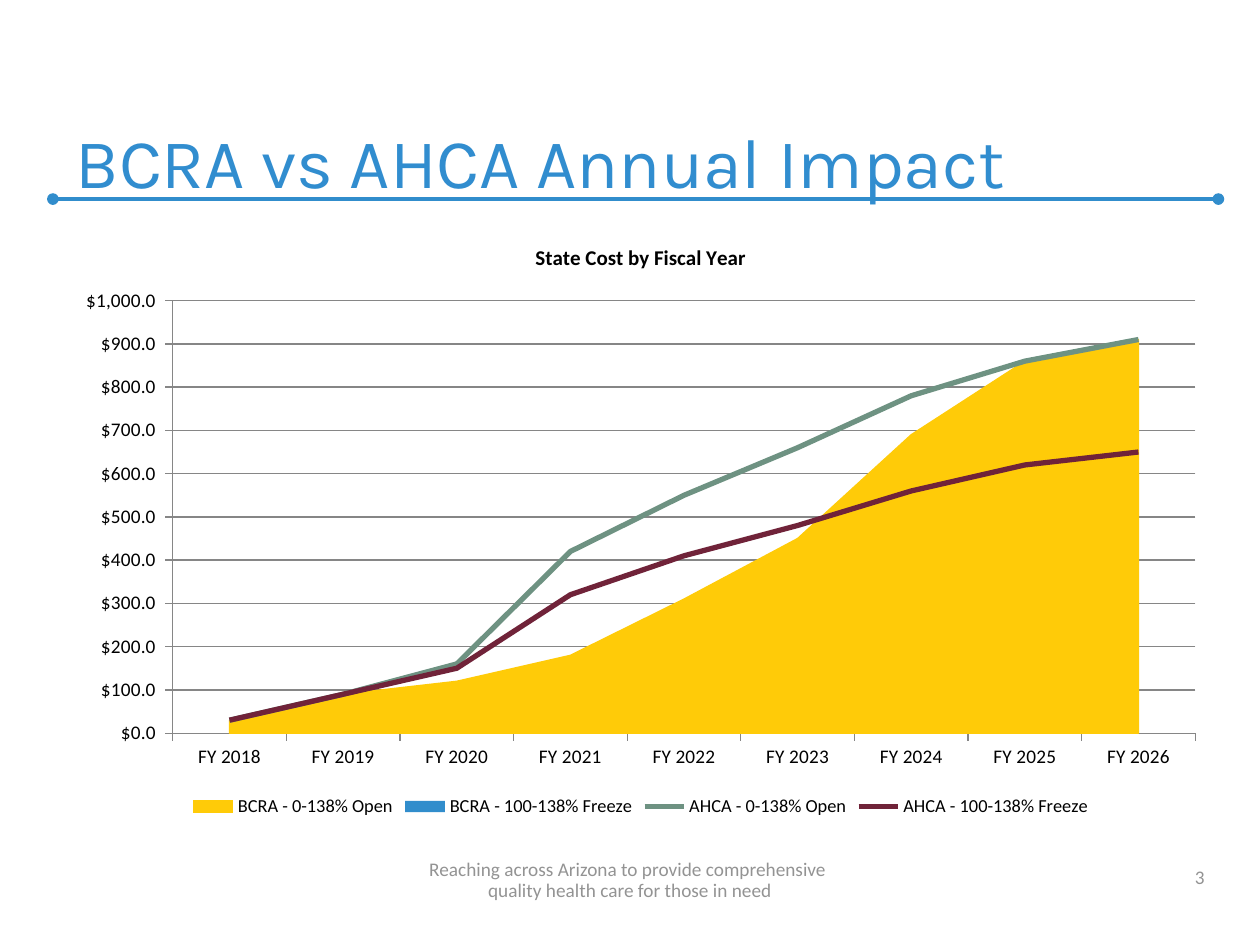
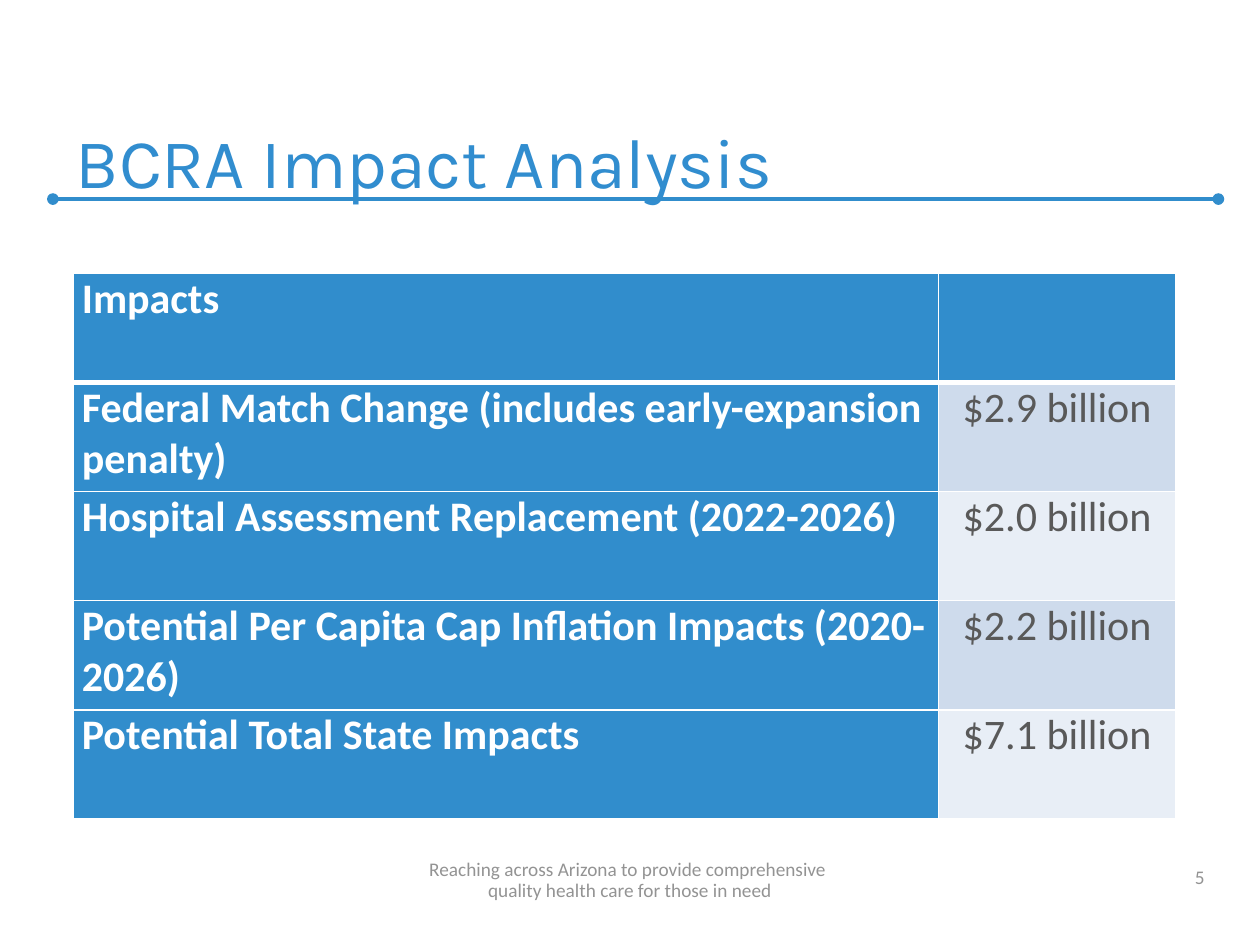
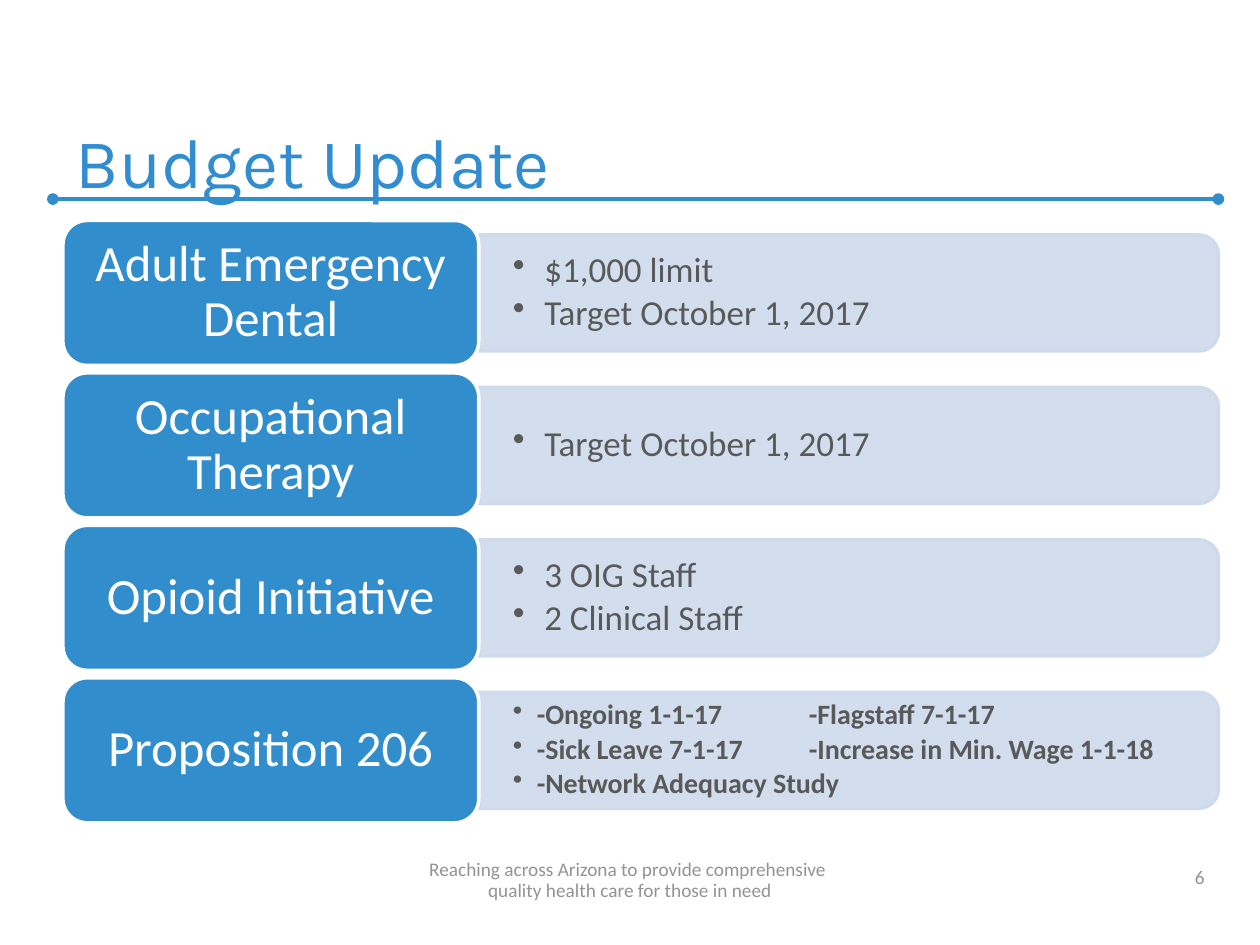
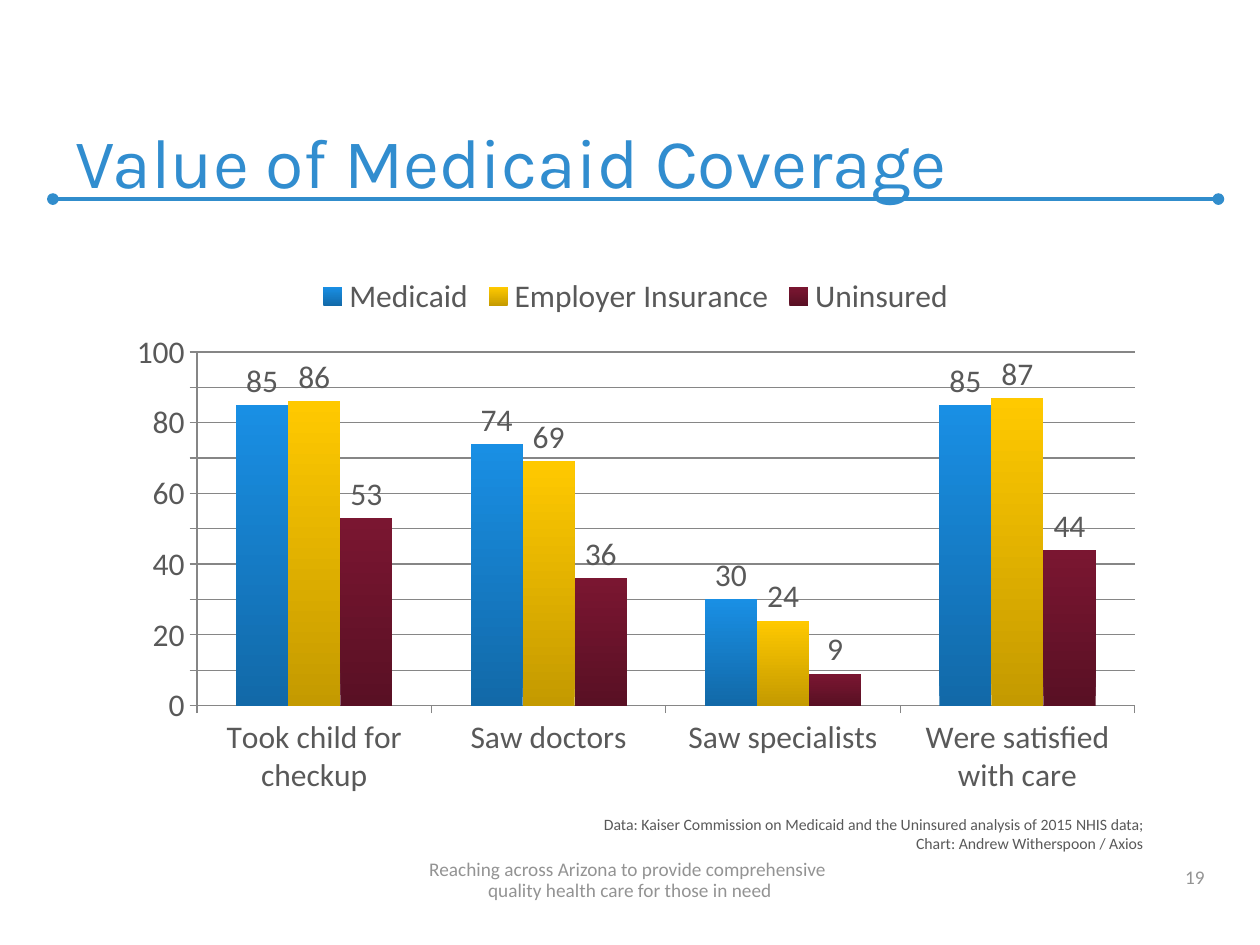
from lxml import etree
from pptx import Presentation
from pptx.chart.data import CategoryChartData
from pptx.dml.color import RGBColor
from pptx.enum.chart import (XL_CHART_TYPE, XL_LABEL_POSITION, XL_LEGEND_POSITION,
                             XL_MARKER_STYLE, XL_TICK_MARK)
from pptx.enum.shapes import MSO_CONNECTOR, MSO_SHAPE
from pptx.enum.text import MSO_ANCHOR, MSO_AUTO_SIZE, PP_ALIGN
from pptx.oxml import parse_xml
from pptx.oxml.ns import nsdecls, qn
from pptx.util import Inches, Pt

AREA, COLUMN = XL_CHART_TYPE.AREA, XL_CHART_TYPE.COLUMN_CLUSTERED
LEFT, CENTER, RIGHT = PP_ALIGN.LEFT, PP_ALIGN.CENTER, PP_ALIGN.RIGHT
TOP, MIDDLE, BOTTOM = MSO_ANCHOR.TOP, MSO_ANCHOR.MIDDLE, MSO_ANCHOR.BOTTOM

COLORS = {
    "title": "318DCF", "blue": "318DCC", "gold": "FFCB08", "wine": "702339",
    "sage": "6E9282", "pale": "CEDBEC", "light": "E8EEF6", "text": "595959",
    "foot": "939393", "grid": "868686", "white": "FFFFFF", "black": "000000",
    "blue_hi": "198FE4", "blue_lo": "1269A8", "gold_hi": "FFC900",
    "gold_lo": "C49A00", "wine_hi": "7A1631", "wine_lo": "591024",
}
BODY, HEAD = "Calibri", "Karla"
WIDE, HIGH = 10, 7.5

FOOT = ["Reaching across Arizona to provide comprehensive ",
        "quality health care for those in need"]

COST = {
    "title": "State Cost by Fiscal Year",
    "cats": [f"FY {year}" for year in range(2018, 2027)],
    "areas": [
        ("BCRA - 0-138% Open", [30, 90, 120, 180, 310, 450, 690, 860, 910], "gold"),
        ("BCRA - 100-138% Freeze", [30, 90, 110, 150, 270, 400, 540, 620, 650], "blue"),
    ],
    "lines": [
        ("AHCA - 0-138% Open", [30, 90, 160, 420, 550, 660, 780, 860, 910], "sage"),
        ("AHCA - 100-138% Freeze", [30, 90, 150, 320, 410, 480, 560, 620, 650], "wine"),
    ],
}
IMPACTS = [
    ("Impacts", ""),
    ("Federal Match Change (includes early-expansion penalty)", "$2.9 billion"),
    ("Hospital Assessment Replacement (2022-2026)", "$2.0 billion"),
    ("Potential Per Capita Cap Inflation Impacts (2020-2026)", "$2.2 billion"),
    ("Potential Total State Impacts", "$7.1 billion"),
]
BUDGET = [
    ("Adult Emergency Dental", ["$1,000 limit", "Target October 1, 2017"], 20, False),
    ("Occupational Therapy", ["Target October 1, 2017"], 20, False),
    ("Opioid Initiative", ["3 OIG Staff", "2 Clinical Staff"], 20, False),
    ("Proposition 206", ["-Ongoing 1-1-17\t-Flagstaff 7-1-17",
                         "-Sick Leave 7-1-17\t-Increase in Min. Wage 1-1-18",
                         "-Network Adequacy Study"], 16, True),
]
CARE = {
    "cats": ["Took child for checkup", "Saw doctors", "Saw specialists",
             "Were satisfied with care"],
    "bars": [
        ("Medicaid", [85, 74, 30, 85], "blue"),
        ("Employer Insurance", [86, 69, 24, 87], "gold"),
        ("Uninsured", [53, 36, 9, 44], "wine"),
    ],
}
CREDIT = ("Data: Kaiser Commission on Medicaid and the Uninsured analysis of "
          "2015 NHIS data; Chart: Andrew Witherspoon / Axios")


def rgb(name):
    return RGBColor.from_string(COLORS[name])


def ink(font, size, color, bold=False, face=BODY):
    font.name, font.size, font.bold = face, Pt(size), bold
    font.color.rgb = rgb(color)


def write(para, text, size, color, bold=False, face=BODY):
    run = para.add_run()
    run.text = text
    ink(run.font, size, color, bold, face)


def inset(frame, side, edge):
    frame.margin_left = frame.margin_right = Inches(side)
    frame.margin_top = frame.margin_bottom = Inches(edge)


def box(slide, at, anchor=TOP):
    frame = slide.shapes.add_textbox(*map(Inches, at)).text_frame
    frame.word_wrap = True
    frame.vertical_anchor = anchor
    return frame


def rule(slide):
    line = slide.shapes.add_connector(
        MSO_CONNECTOR.STRAIGHT, *map(Inches, (0.42, 1.58, 9.67, 1.58)))
    line.line.color.rgb = rgb("blue")
    line.line.width = Pt(2.25)
    pen = line.line._get_or_add_ln()
    for end in ("a:headEnd", "a:tailEnd"):
        etree.SubElement(pen, qn(end), type="oval")
    etree.SubElement(line._element.spPr, qn("a:effectLst"))


def base(deck, title, number):
    slide = deck.slides.add_slide(deck.slide_layouts[5])
    rule(slide)
    head = slide.shapes.title
    head.left, head.top, head.width, head.height = map(Inches, (0.5, 0.33, 9.08, 1.33))
    frame = head.text_frame
    frame.auto_size = MSO_AUTO_SIZE.NONE
    frame.vertical_anchor = BOTTOM
    para = frame.paragraphs[0]
    para.alignment = LEFT
    write(para, title, 40, "title", face=HEAD)

    para = box(slide, (7.33, 6.78, 2.33, 0.32), BOTTOM).paragraphs[0]
    para.alignment = RIGHT
    write(para, str(number), 11, "foot")

    para = box(slide, (0, 6.78, WIDE, 0.42), BOTTOM).paragraphs[0]
    para.alignment = CENTER
    para.line_spacing = Pt(12)
    write(para, FOOT[0], 11, "foot")
    para.add_line_break()
    write(para, FOOT[1], 11, "foot")
    return slide


def plot(slide, kind, at, cats, rows, size, color, spot, peak, step):
    data = CategoryChartData()
    data.categories = cats
    for name, values, _ in rows:
        data.add_series(name, values)
    chart = slide.shapes.add_chart(kind, *map(Inches, at), data).chart
    ink(chart.font, size, color)
    chart.has_title = False
    chart.has_legend = True
    chart.legend.position = spot
    chart.legend.include_in_layout = False
    chart.plots[0].vary_by_categories = False
    axis = chart.value_axis
    axis.minimum_scale, axis.maximum_scale, axis.major_unit = 0, peak, step
    axis.has_major_gridlines = True
    axis.major_gridlines.format.line.color.rgb = rgb("grid")
    for each in (axis, chart.category_axis):
        each.major_tick_mark = XL_TICK_MARK.OUTSIDE
        each.minor_tick_mark = XL_TICK_MARK.NONE
        each.format.line.color.rgb = rgb("grid")
        ink(each.tick_labels.font, size, color)
    return chart


def split(chart, count):
    area = chart.plots[0]._element
    line = parse_xml(f'<c:lineChart {nsdecls("c")}><c:grouping val="standard"/>'
                     '<c:varyColors val="0"/></c:lineChart>')
    for ser in area.findall(qn("c:ser"))[count:]:
        line.append(ser)
    etree.SubElement(line, qn("c:marker"), val="1")
    for ref in area.findall(qn("c:axId")):
        etree.SubElement(line, qn("c:axId"), val=ref.get("val"))
    area.addnext(line)
    chart.value_axis._element.find(qn("c:crossBetween")).set("val", "between")


def cost(slide):
    areas, lines = COST["areas"], COST["lines"]
    chart = plot(slide, AREA, (0.5, 1.75, 9.17, 4.78), COST["cats"], areas + lines,
                 11, "black", XL_LEGEND_POSITION.BOTTOM, 1000, 100)
    split(chart, len(areas))
    chart.has_title = True
    write(chart.chart_title.text_frame.paragraphs[0], COST["title"], 12, "black", True)
    ink(chart.legend.font, 10.5, "black")
    marks = chart.value_axis.tick_labels
    marks.number_format = '"$"#,##0.0_);\\("$"#,##0.0\\)'
    marks.number_format_is_linked = False
    for ser, (_, _, color) in zip(chart.plots[0].series, areas):
        ser.format.fill.solid()
        ser.format.fill.fore_color.rgb = rgb(color)
    edge = chart.plots[0].series[0].format.line
    edge.color.rgb, edge.width = rgb("gold"), Pt(0.75)
    for ser, (_, _, color) in zip(chart.plots[1].series, lines):
        ser.format.line.color.rgb = rgb(color)
        ser.format.line.width = Pt(3)
        ser.marker.style = XL_MARKER_STYLE.NONE
        ser.smooth = False


def borders(cell, base_width):
    props = cell._tc.get_or_add_tcPr()
    widths = {"a:lnL": 1, "a:lnR": 1, "a:lnT": 1, "a:lnB": base_width}
    for spot, (tag, width) in enumerate(widths.items()):
        edge = etree.Element(qn(tag), w=str(Pt(width)))
        fill = etree.SubElement(edge, qn("a:solidFill"))
        etree.SubElement(fill, qn("a:srgbClr"), val=COLORS["white"])
        props.insert(spot, edge)


def impacts(slide):
    at = map(Inches, (0.58, 2.17, 8.75, 4.33))
    table = slide.shapes.add_table(len(IMPACTS), 2, *at).table
    table.first_col = True
    for col, width in zip(table.columns, (6.87, 1.88)):
        col.width = Inches(width)
    for r, row in enumerate(IMPACTS):
        for c, text in enumerate(row):
            cell = table.cell(r, c)
            dark = r == 0 or c == 0
            inset(cell, 0.07, 0)
            cell.fill.solid()
            cell.fill.fore_color.rgb = rgb("blue" if dark else "pale" if r % 2 else "light")
            borders(cell, 3 if r == 0 else 1)
            if text:
                para = cell.text_frame.paragraphs[0]
                para.alignment = CENTER if c else LEFT
                para.space_after = Pt(1)
                write(para, text, 24, "white" if dark else "text", dark)


def bullet(para, indent, tab):
    props = para._p.get_or_add_pPr()
    props.set("marL", str(Inches(indent)))
    props.set("indent", str(-Inches(indent)))
    etree.SubElement(props, qn("a:buChar"), char="•")
    if tab:
        stops = etree.SubElement(props, qn("a:tabLst"))
        etree.SubElement(stops, qn("a:tab"), pos=str(Inches(tab)), algn="l")


def fade(paint):
    tint = paint._xPr.find(qn("a:solidFill"))[0]
    etree.SubElement(tint, qn("a:alpha"), val="90000")


def block(slide, kind, at, fill, edge):
    shape = slide.shapes.add_shape(kind, *map(Inches, at))
    shape.shadow.inherit = False
    shape.fill.solid()
    shape.fill.fore_color.rgb = rgb(fill)
    shape.line.color.rgb = rgb(edge)
    shape.line.width = Pt(2)
    return shape


def budget(slide):
    left, top, card, tall, step = 0.5, 1.75, 3.3, 1.15, 1.21
    long, thick = 5.87, 0.92
    start = left + card
    for i, (name, items, size, bold) in enumerate(BUDGET):
        y = top + i * step
        mid = y + tall / 2
        panel = block(slide, MSO_SHAPE.ROUND_2_SAME_RECTANGLE,
                      (start + (long - thick) / 2, mid - long / 2, thick, long),
                      "pale", "pale")
        panel.rotation = 90
        fade(panel.fill)
        frame = box(slide, (start, mid - 0.415, 5.82, 0.83), MIDDLE)
        inset(frame, 0.27, 0)
        frame.margin_right = Inches(0.1)
        for n, item in enumerate(items):
            para = frame.add_paragraph() if n else frame.paragraphs[0]
            bullet(para, 0.19 if bold else 0.25, 2.35 if "\t" in item else 0)
            para.level = 1
            para.line_spacing = 0.9
            para.space_after = Pt(size * 0.15)
            write(para, item, size, "text", bold)

        tile = block(slide, MSO_SHAPE.ROUNDED_RECTANGLE, (left, y, card, tall),
                     "blue", "white")
        frame = tile.text_frame
        frame.word_wrap = True
        frame.vertical_anchor = MIDDLE
        inset(frame, 0.18, 0.12)
        para = frame.paragraphs[0]
        para.alignment = CENTER
        para.line_spacing = 0.9
        write(para, name, 29, "white")


def care(slide):
    chart = plot(slide, COLUMN, (0.92, 2.08, 8.25, 4.31), CARE["cats"], CARE["bars"],
                 18, "text", XL_LEGEND_POSITION.TOP, 100, 10)
    ink(chart.legend.font, 18, "text")
    bars = chart.plots[0]
    bars.gap_width, bars.overlap = 150, 0
    for ser, (_, _, color) in zip(bars.series, CARE["bars"]):
        fill = ser.format.fill
        fill.gradient()
        fill.gradient_angle = 90
        for stop, tone in zip(fill.gradient_stops, ("_lo", "_hi")):
            stop.color.rgb = rgb(color + tone)
        ser.invert_if_negative = False
        tags = ser.data_labels
        tags.show_value = True
        tags.position = XL_LABEL_POSITION.OUTSIDE_END
        ink(tags.font, 18, "text")
    frame = box(slide, (4.42, 6.42, 4.75, 0.4))
    frame.auto_size = MSO_AUTO_SIZE.SHAPE_TO_FIT_TEXT
    para = frame.paragraphs[0]
    para.alignment = RIGHT
    write(para, CREDIT, 9, "text")


PAGES = [
    ("BCRA vs AHCA Annual Impact", 3, cost),
    ("BCRA Impact Analysis", 5, impacts),
    ("Budget Update", 6, budget),
    ("Value of Medicaid Coverage", 19, care),
]


def main():
    deck = Presentation()
    deck.slide_width, deck.slide_height = Inches(WIDE), Inches(HIGH)
    for title, number, fill in PAGES:
        fill(base(deck, title, number))
    deck.save("out.pptx")


if __name__ == "__main__":
    main()
